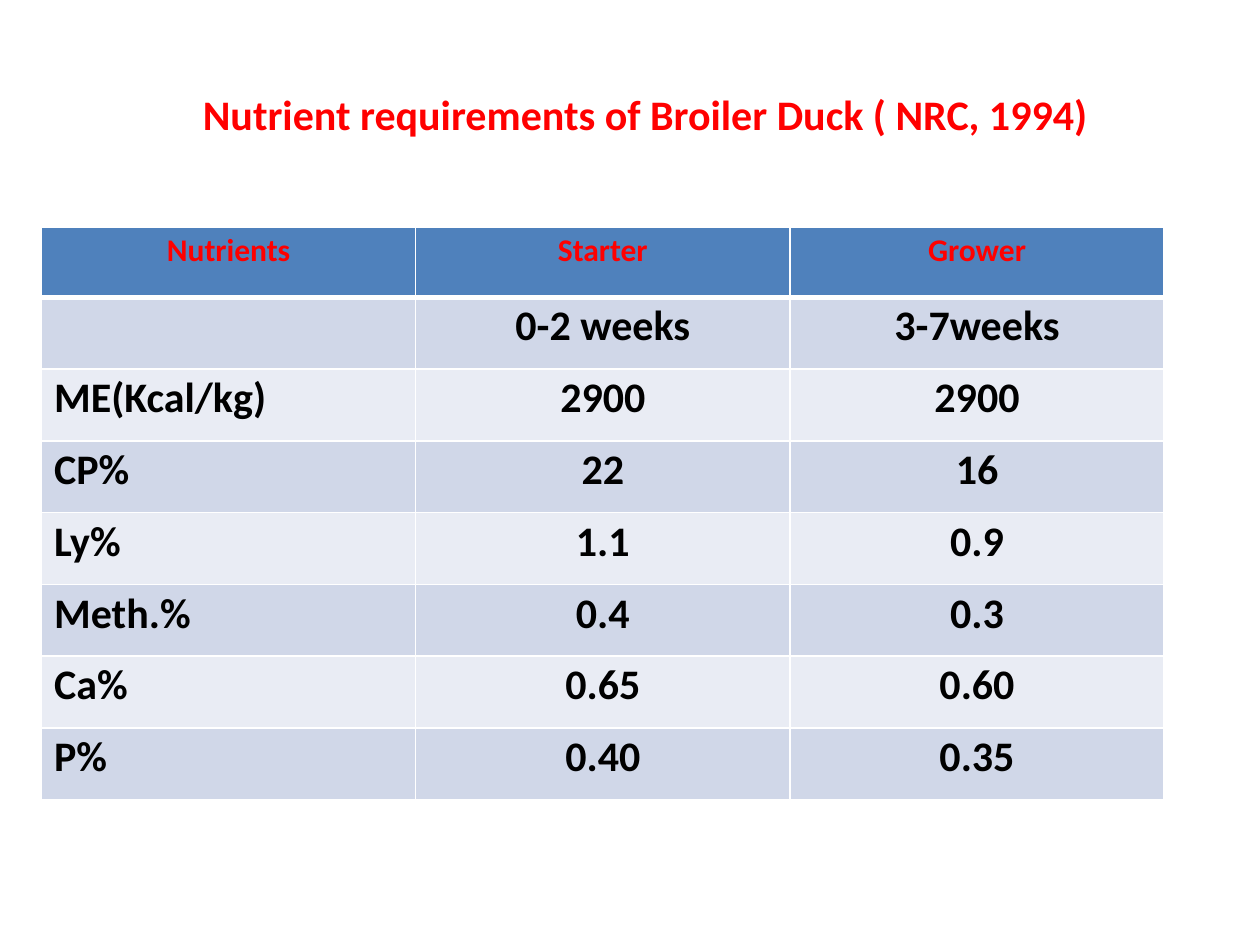
from dataclasses import dataclass

from lxml.etree import SubElement
from pptx import Presentation
from pptx.dml.color import RGBColor
from pptx.enum.text import MSO_ANCHOR, PP_ALIGN
from pptx.oxml.ns import qn
from pptx.util import Inches, Pt


@dataclass(frozen=True)
class Theme:
    font: str = "Calibri"
    accent: str = "FF0000"
    ink: str = "000000"
    header_fill: str = "4F81BC"
    bands: tuple = ("D0D7E8", "E9ECF4")
    border: str = "FFFFFF"
    title_size: float = 24
    header_size: float = 18
    body_size: float = 24
    thin: float = 1
    thick: float = 3


def write(frame, text, *, size, color, font, align=PP_ALIGN.LEFT, before=2.1):
    paragraph = frame.paragraphs[0]
    paragraph.alignment = align
    paragraph.space_before = Pt(before)
    if not text:
        paragraph.font.size = Pt(size)
        return
    run = paragraph.add_run()
    run.text = text
    run.font.name = font
    run.font.size = Pt(size)
    run.font.bold = True
    run.font.color.rgb = RGBColor.from_string(color)


class SlideBuilder:
    def __init__(self, slide, theme):
        self.slide = slide
        self.theme = theme

    def title(self, text, left, top, width, height):
        box = self.slide.shapes.add_textbox(
            Inches(left), Inches(top), Inches(width), Inches(height))
        frame = box.text_frame
        frame.word_wrap = True
        frame.margin_left = Inches(0.01)
        frame.margin_right = frame.margin_bottom = 0
        frame.margin_top = Inches(0.02)
        write(frame, text, size=self.theme.title_size, color=self.theme.accent,
              font=self.theme.font, before=1.1)

    def table(self, rows, left, top, column_width, header_height, row_height):
        row_count, column_count = len(rows), len(rows[0])
        height = header_height + row_height * (row_count - 1)
        table = self.slide.shapes.add_table(
            row_count, column_count, Inches(left), Inches(top),
            Inches(column_width * column_count), Inches(height)).table
        for column in table.columns:
            column.width = Inches(column_width)
        for r, values in enumerate(rows):
            table.rows[r].height = Inches(row_height if r else header_height)
            for c, value in enumerate(values):
                self.cell(table.cell(r, c), value, r, c)

    def cell(self, cell, text, row, column):
        theme = self.theme
        is_header = row == 0
        is_label = column == 0 and not is_header

        # Text
        cell.margin_left = Inches(0.1 if is_label else 0)
        cell.margin_right = cell.margin_bottom = 0
        cell.margin_top = Inches(0.04 if is_header else 0.03)
        cell.vertical_anchor = MSO_ANCHOR.TOP
        write(cell.text_frame, text, font=theme.font,
              size=theme.header_size if is_header else theme.body_size,
              color=theme.accent if is_header else theme.ink,
              align=PP_ALIGN.LEFT if is_label else PP_ALIGN.CENTER,
              before=2.6 if is_header else 2.1)

        # Borders go before the fill, which python-pptx then places after them
        self.border(cell, "L", theme.thin)
        self.border(cell, "R", theme.thin)
        self.border(cell, "T", theme.thick if row == 1 else theme.thin)
        self.border(cell, "B", theme.thick if is_header else theme.thin)

        cell.fill.solid()
        cell.fill.fore_color.rgb = RGBColor.from_string(
            theme.header_fill if is_header else theme.bands[(row - 1) % 2])

    def border(self, cell, side, width):
        properties = cell._tc.get_or_add_tcPr()
        line = SubElement(properties, qn(f"a:ln{side}"), w=str(Pt(width)))
        fill = SubElement(line, qn("a:solidFill"))
        SubElement(fill, qn("a:srgbClr"), val=self.theme.border)


REQUIREMENTS = [
    ("Nutrients", "Starter", "Grower"),
    ("", "0-2 weeks", "3-7weeks"),
    ("ME(Kcal/kg)", "2900", "2900"),
    ("CP%", "22", "16"),
    ("Ly%", "1.1", "0.9"),
    ("Meth.%", "0.4", "0.3"),
    ("Ca%", "0.65", "0.60"),
    ("P%", "0.40", "0.35"),
]


def main():
    presentation = Presentation()
    presentation.slide_width = Inches(10)
    presentation.slide_height = Inches(7.5)
    slide = presentation.slides.add_slide(presentation.slide_layouts[6])
    builder = SlideBuilder(slide, Theme())

    # Nutrient table
    builder.table(REQUIREMENTS, left=0.33, top=1.8, column_width=2.97,
                  header_height=0.56, row_height=0.57)

    # Heading
    builder.title("Nutrient requirements of Broiler Duck ( NRC, 1994)",
                  left=1.6, top=0.68, width=7.05, height=0.43)

    presentation.save("out.pptx")


if __name__ == "__main__":
    main()
